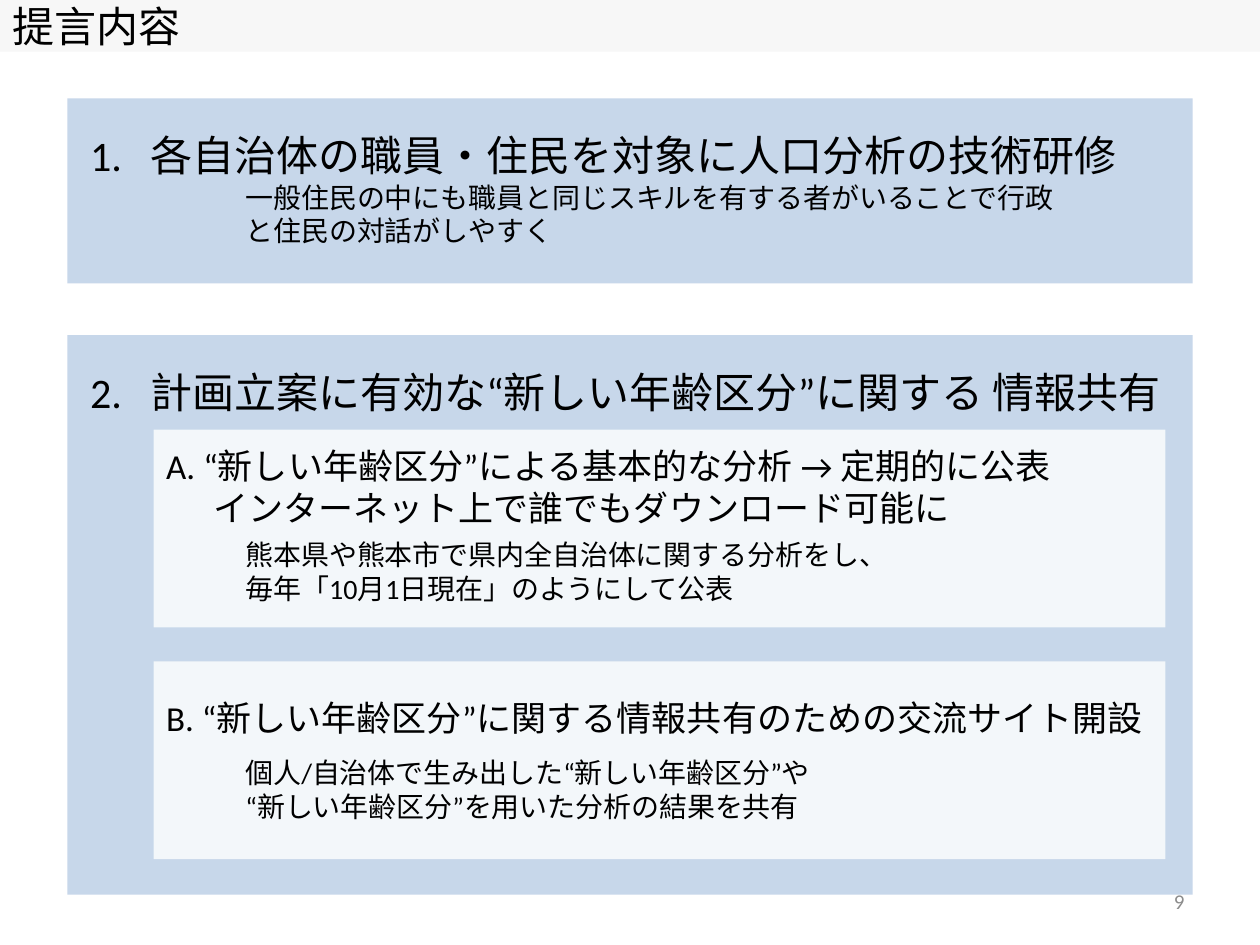
from lxml import etree
from pptx import Presentation
from pptx.dml.color import RGBColor
from pptx.enum.shapes import MSO_SHAPE
from pptx.enum.text import MSO_ANCHOR, PP_ALIGN
from pptx.oxml.ns import qn
from pptx.util import Pt

RECTANGLE = MSO_SHAPE.RECTANGLE
TOP, MIDDLE = MSO_ANCHOR.TOP, MSO_ANCHOR.MIDDLE
LEFT, RIGHT = PP_ALIGN.LEFT, PP_ALIGN.RIGHT
FONT = "Calibri"
BLACK, GREY, BLUE, WHITE, PALE = "000000", "8C8C8C", "B9CDE5", "FFFFFF", "F2F2F2"

# Content
TITLE = "提言内容"
PAGE_NUMBER = "9"
# Panels: top, height, numbered heading
PANELS = [
    (191.5, 319.7, "2.\t計画立案に有効な“新しい年齢区分”に関する 情報共有"),
    (56.2, 105.8, "1.\t各自治体の職員・住民を対象に人口分析の技術研修"),
]
CARD_TOPS = [245.5, 378]
# Points on the cards: top, lines
POINTS = [
    (250.6, ["A. “新しい年齢区分”による基本的な分析 → 定期的に公表",
             "インターネット上で誰でもダウンロード可能に"]),
    (394.6, ["B. “新しい年齢区分”に関する情報共有のための交流サイト開設"]),
]
# Explanations: top, width, lines
DETAILS = [
    (99.4, 481.7, ["一般住民の中にも職員と同じスキルを有する者がいることで行政と住民の対話がしやすく"]),
    (303.8, 436.3, ["熊本県や熊本市で県内全自治体に関する分析をし、",
                    "毎年「10月1日現在」のようにして公表"]),
    (428.4, 532.8, ["個人/自治体で生み出した“新しい年齢区分”や",
                    "“新しい年齢区分”を用いた分析の結果を共有"]),
]

# Layout
SLIDE_WIDTH, SLIDE_HEIGHT = 720, 540
PANEL_LEFT, PANEL_WIDTH = 38.5, 643
CARD_LEFT, CARD_WIDTH, CARD_HEIGHT = 87.8, 578.2, 113
POINT_WIDTH = 610
DETAIL_LEFT = 133.2
NUMBER_INSET, NUMBER_INDENT = 13, 34.4
POINT_INDENT = 27


def color(hex_string):
    return RGBColor.from_string(hex_string)


def write(shape, lines, size, font_color=BLACK, anchor=TOP, align=LEFT):
    frame = shape.text_frame
    frame.word_wrap = True
    frame.vertical_anchor = anchor
    frame.text = "\n".join(lines)
    for paragraph in frame.paragraphs:
        paragraph.alignment = align
        for run in paragraph.runs:
            run.font.size = Pt(size)
            run.font.color.rgb = color(font_color)
            run.font.name = FONT
            # The East Asian font keeps quotes and middle dots narrow
            properties = run._r.get_or_add_rPr()
            etree.SubElement(properties, qn("a:ea")).set("typeface", FONT)
    return frame


def indent(paragraph, margin, first_line=0):
    properties = paragraph._p.get_or_add_pPr()
    properties.set("marL", str(Pt(margin)))
    properties.set("indent", str(Pt(first_line)))


def add_box(left, top, width, height, fill, opacity):
    shape = slide.shapes.add_shape(RECTANGLE, Pt(left), Pt(top), Pt(width), Pt(height))
    shape.shadow.inherit = False
    shape.line.fill.background()
    shape.fill.solid()
    shape.fill.fore_color.rgb = color(fill)
    fill_color = shape._element.spPr.find(qn("a:solidFill"))[0]
    etree.SubElement(fill_color, qn("a:alpha")).set("val", str(opacity * 1000))
    return shape


def add_text(left, top, width, height, lines, size, **style):
    box = slide.shapes.add_textbox(Pt(left), Pt(top), Pt(width), Pt(height))
    return write(box, lines, size, **style)


presentation = Presentation()
presentation.slide_width, presentation.slide_height = Pt(SLIDE_WIDTH), Pt(SLIDE_HEIGHT)
slide = presentation.slides.add_slide(presentation.slide_layouts[6])

# Panels with numbered headings
for top, height, heading in PANELS:
    panel = add_box(PANEL_LEFT, top, PANEL_WIDTH, height, BLUE, 80)
    frame = write(panel, [heading], 24)
    frame.margin_left, frame.margin_right = Pt(NUMBER_INSET), Pt(0)
    frame.paragraphs[0].line_spacing = 1.5
    indent(frame.paragraphs[0], NUMBER_INDENT, -NUMBER_INDENT)

# Cards inside the second panel
for top in CARD_TOPS:
    add_box(CARD_LEFT, top, CARD_WIDTH, CARD_HEIGHT, WHITE, 80)

# Title bar and page number
write(add_box(0, 0, SLIDE_WIDTH, 29.5, PALE, 60), [TITLE], 24, anchor=MIDDLE)
add_text(516, 500.5, 168, 28.8, [PAGE_NUMBER], 12,
         font_color=GREY, anchor=MIDDLE, align=RIGHT)

# Lettered points, continuation lines indented
for top, lines in POINTS:
    frame = add_text(CARD_LEFT, top, POINT_WIDTH, 7.2 + 24 * len(lines), lines, 20)
    for paragraph in frame.paragraphs[1:]:
        indent(paragraph, POINT_INDENT)

# Explanations
for top, width, lines in DETAILS:
    add_text(DETAIL_LEFT, top, width, 46, lines, 16)

presentation.save("out.pptx")
